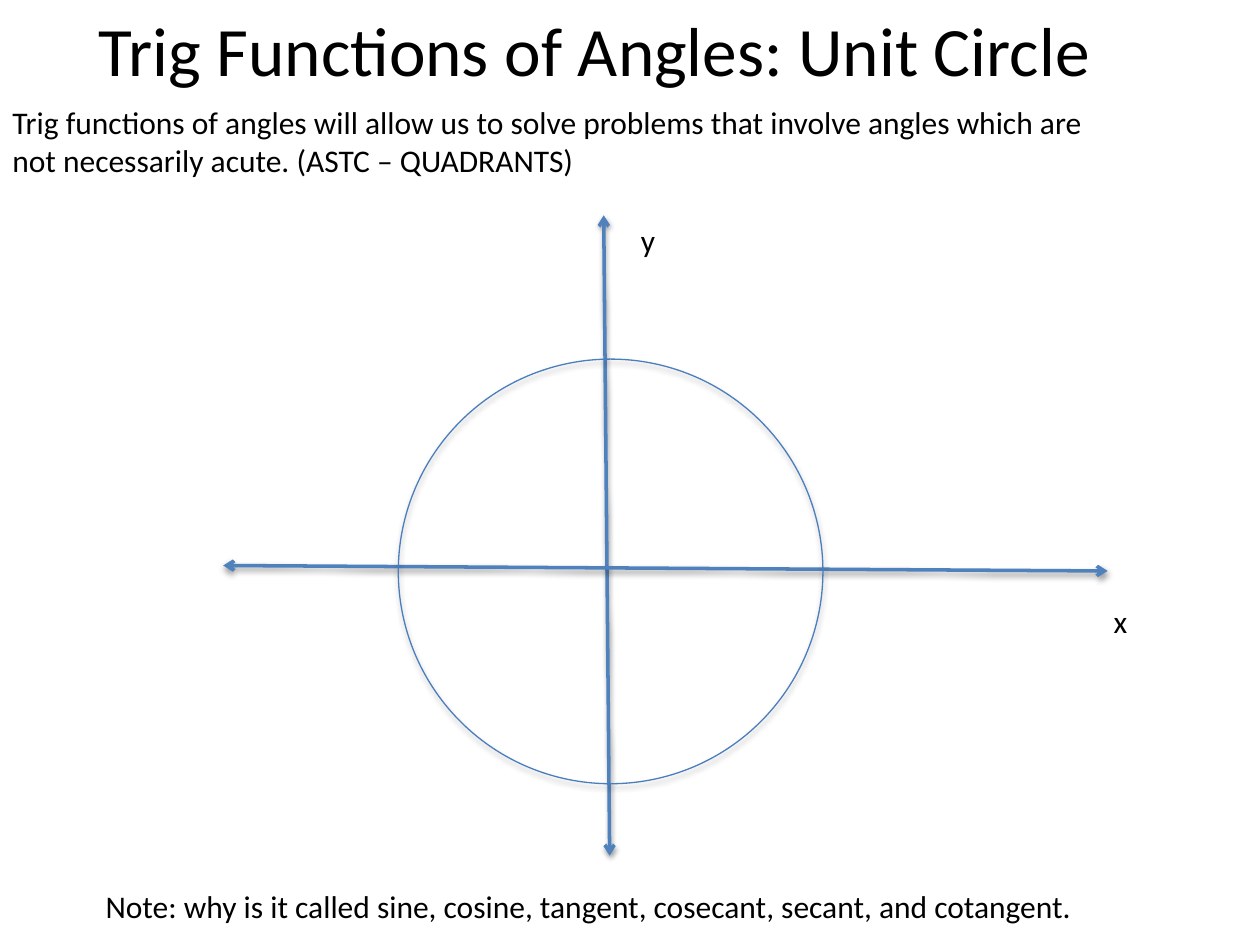
from dataclasses import dataclass

from lxml.etree import SubElement
from pptx import Presentation
from pptx.dml.color import RGBColor
from pptx.enum.shapes import MSO_CONNECTOR, MSO_SHAPE
from pptx.enum.text import MSO_ANCHOR, MSO_AUTO_SIZE, PP_ALIGN
from pptx.oxml.ns import qn
from pptx.slide import Slide
from pptx.text.text import TextFrame
from pptx.util import Cm, Pt


@dataclass(frozen=True)
class Theme:
    font: str = "Calibri"
    ink: str = "000000"
    axis: str = "4F81BD"
    ring: str = "4B7EBC"
    title: float = 39.6
    body: float = 18


@dataclass(frozen=True)
class Label:
    text: str
    left: float
    top: float
    width: float
    height: float = 1.02
    wrap: bool = False


@dataclass(frozen=True)
class Axis:
    x1: float
    y1: float
    x2: float
    y2: float


THEME = Theme()
TITLE = "Trig Functions of Angles: Unit Circle"
LABELS = (
    Label("y", 12.67, 4.34, 0.81),
    Label("x", 22.2, 12.01, 0.79),
    Label(
        "Trig functions of angles will allow us to solve problems that involve angles which are\n"
        "not necessarily acute. (ASTC – QUADRANTS)",
        0, 1.96, 25.4, 1.8, True,
    ),
    Label(
        "Note: why is it called sine, cosine, tangent, cosecant, secant, and cotangent.",
        1.88, 17.75, 20.12,
    ),
)
AXES = (Axis(12.17, 4.34, 12.29, 17.25), Axis(4.5, 11.4, 22.33, 11.51))


def style(frame: TextFrame, size: float) -> None:
    """Set the theme font on every paragraph."""
    for para in frame.paragraphs:
        para.font.name = THEME.font
        para.font.size = Pt(size)
        para.font.color.rgb = RGBColor.from_string(THEME.ink)


def shade(props, alpha: int, dist: float) -> None:
    """Add a soft black shadow that falls straight down."""
    effects = SubElement(props, qn("a:effectLst"))
    outer = SubElement(
        effects, qn("a:outerShdw"), blurRad=str(Pt(3.1)), dist=str(Pt(dist)),
        dir="5400000", rotWithShape="0",
    )
    color = SubElement(outer, qn("a:srgbClr"), val=THEME.ink)
    SubElement(color, qn("a:alpha"), val=str(alpha * 1000))


def add_title(slide: Slide) -> None:
    """Place and fill the title."""
    title = slide.shapes.title
    title.left, title.top, title.width, title.height = Cm(0.56), Cm(0), Cm(22.86), Cm(1.96)
    frame = title.text_frame
    frame.text = TITLE
    frame.vertical_anchor = MSO_ANCHOR.MIDDLE
    frame.paragraphs[0].alignment = PP_ALIGN.CENTER
    style(frame, THEME.title)


def add_label(slide: Slide, label: Label) -> None:
    """Write one text box."""
    box = slide.shapes.add_textbox(
        Cm(label.left), Cm(label.top), Cm(label.width), Cm(label.height)
    )
    frame = box.text_frame
    frame.text = label.text
    frame.word_wrap = label.wrap
    frame.auto_size = MSO_AUTO_SIZE.SHAPE_TO_FIT_TEXT
    style(frame, THEME.body)


def add_axis(slide: Slide, axis: Axis) -> None:
    """Draw a line with an arrowhead at each end."""
    link = slide.shapes.add_connector(
        MSO_CONNECTOR.STRAIGHT, Cm(axis.x1), Cm(axis.y1), Cm(axis.x2), Cm(axis.y2)
    )
    link.line.color.rgb = RGBColor.from_string(THEME.axis)
    link.line.width = Pt(2)
    props = link._element.spPr
    for end in ("a:headEnd", "a:tailEnd"):
        SubElement(props.find(qn("a:ln")), qn(end), type="arrow")
    shade(props, 38, 1.6)


def add_ring(slide: Slide) -> None:
    """Draw the unit circle."""
    ring = slide.shapes.add_shape(MSO_SHAPE.OVAL, Cm(8.03), Cm(7.24), Cm(8.56), Cm(8.56))
    ring.fill.background()
    ring.line.color.rgb = RGBColor.from_string(THEME.ring)
    ring.line.width = Pt(0.75)
    shade(ring._element.spPr, 35, 1.8)


def main() -> None:
    """Build and save the slide."""
    deck = Presentation()
    deck.slide_width, deck.slide_height = Cm(25.4), Cm(19.05)
    slide = deck.slides.add_slide(deck.slide_layouts[5])
    add_title(slide)
    for axis in AXES:
        add_axis(slide, axis)
    for label in LABELS:
        add_label(slide, label)
    add_ring(slide)
    deck.save("out.pptx")


if __name__ == "__main__":
    main()
